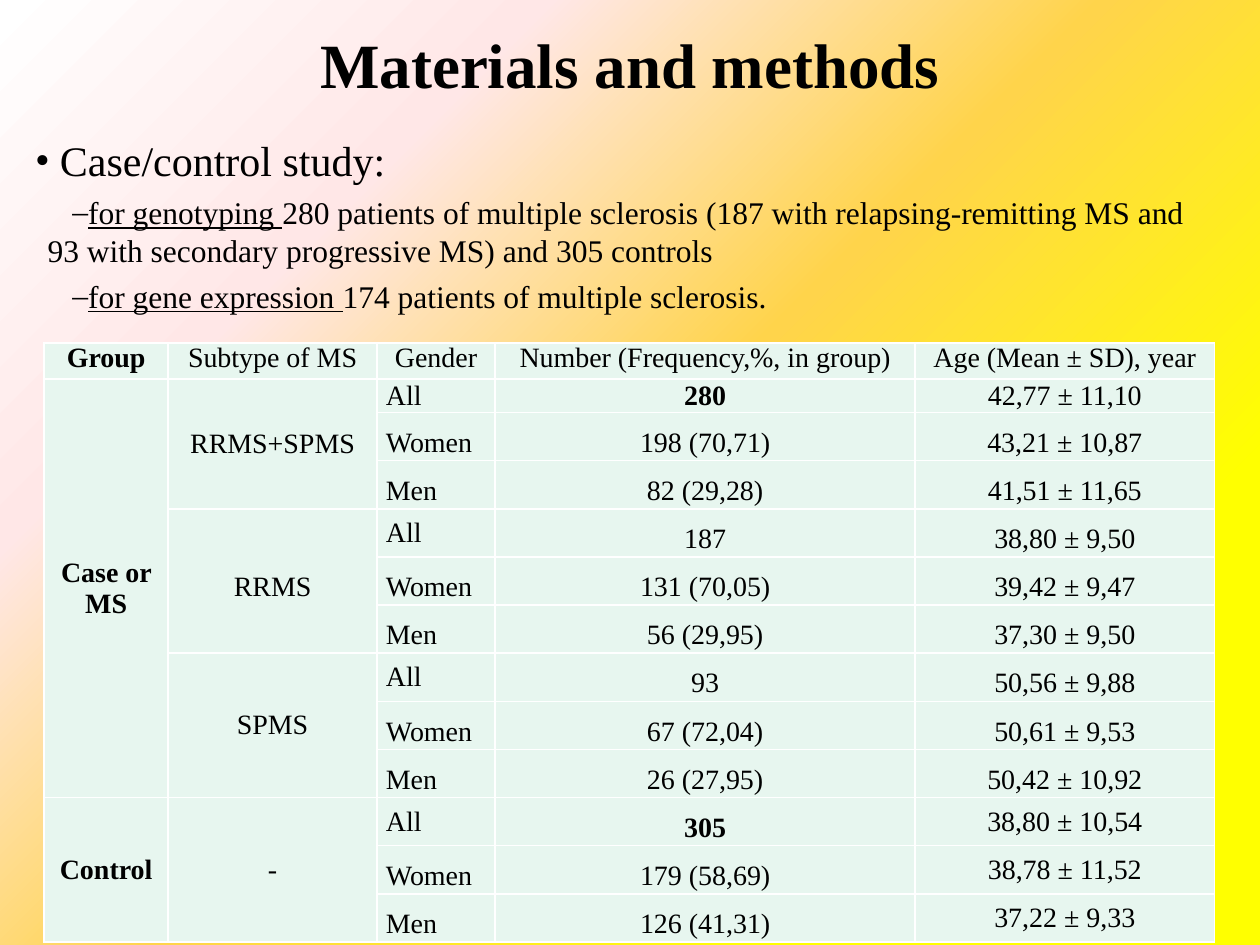
from lxml import etree
from pptx import Presentation
from pptx import util as u
from pptx.dml.color import RGBColor
from pptx.enum import text
from pptx.oxml.ns import qn

FONT = "Times New Roman"
BLACK, WHITE, MINT = "000000", "FFFFFF", "E7F6EF"
STOPS = [(0, WHITE), (25, "FFE7E7"), (50, "FFD44B"), (78, "FFFF00")]
CENTER, LEFT = text.PP_ALIGN.CENTER, text.PP_ALIGN.LEFT
MIDDLE, TOP = text.MSO_ANCHOR.MIDDLE, text.MSO_ANCHOR.TOP

HEADER = ["Group", "Subtype of MS", "Gender", "Number (Frequency,%, in group)",
          "Age (Mean ± SD), year"]
GENDERS = ["All", "Women", "Men"]
SUBTYPES = [
    ("RRMS+SPMS", [("280", "42,77 ± 11,10"), ("198 (70,71)", "43,21 ± 10,87"),
                   ("82 (29,28)", "41,51 ± 11,65")]),
    ("RRMS", [("187", "38,80 ± 9,50"), ("131 (70,05)", "39,42 ± 9,47"),
              ("56 (29,95)", "37,30 ± 9,50")]),
    ("SPMS", [("93", "50,56 ± 9,88"), ("67 (72,04)", "50,61 ± 9,53"),
              ("26 (27,95)", "50,42 ± 10,92")]),
    ("-", [("305", "38,80 ± 10,54"), ("179 (58,69)", "38,78 ± 11,52"),
           ("126 (41,31)", "37,22 ± 9,33")]),
]
GROUPS = [("Case or MS", 1, 9), ("Control", 10, 12)]
COL_WIDTHS = [2.5, 4.21, 2.38, 8.47, 6.03]
ROW_HEIGHTS = [0.73, 0.64] + [0.97] * 11
LOOSE = 1.4  # the widest line spacing that fits the row height

STUDY = [
    ("for genotyping ", "280 patients of multiple sclerosis (187 with relapsing-remitting "
     "MS and 93 with secondary progressive MS) and 305 controls"),
    ("for gene expression ", "174 patients of multiple sclerosis."),
]


def color(hex_value):
    return RGBColor.from_string(hex_value)


def sub(parent, tag, **attrs):
    return etree.SubElement(parent, qn(tag), {k: str(v) for k, v in attrs.items()})


def style(r, size, bold=False, underline=None):
    f = r.font
    f.name, f.size, f.bold, f.underline = FONT, u.Pt(size), bold, underline
    f.color.rgb = color(BLACK)


def set_bullet(p, char, margin, indent):
    pPr = p._p.get_or_add_pPr()
    pPr.set("marL", str(u.Cm(margin)))
    pPr.set("indent", str(u.Cm(indent)))
    sub(pPr, "a:buFont", typeface=FONT)
    sub(pPr, "a:buChar", char=char)


def add_background(s):
    """Radial gradient spreading from the top left corner."""
    s.background.fill.solid()
    bgPr = s.element.find(".//" + qn("p:bgPr"))
    bgPr.remove(bgPr[0])
    grad = etree.Element(qn("a:gradFill"), rotWithShape="1")
    bgPr.insert(0, grad)
    stops = sub(grad, "a:gsLst")
    for pos, value in STOPS:
        sub(sub(stops, "a:gs", pos=pos * 1000), "a:srgbClr", val=value)
    sub(sub(grad, "a:path", path="circle"), "a:fillToRect", r=100000, b=100000)


def add_text_frame(s, box, anchor):
    tf = s.shapes.add_textbox(*map(u.Cm, box)).text_frame
    tf.word_wrap = True
    tf.vertical_anchor = anchor
    return tf


def add_title(s, box):
    p = add_text_frame(s, box, MIDDLE).paragraphs[0]
    p.text = "Materials and methods"
    p.alignment = CENTER
    style(p.runs[0], 36, bold=True)


def add_study(s, box):
    tf = add_text_frame(s, box, TOP)
    p = tf.paragraphs[0]
    p.text = "Case/control study:"
    p.line_spacing, p.space_before = 1.25, u.Pt(7)
    set_bullet(p, "•", 0.5, -0.5)
    style(p.runs[0], 24)
    for purpose, patients in STUDY:
        p = tf.add_paragraph()
        p.level, p.space_before = 1, u.Pt(4.5)
        set_bullet(p, "–", 0.25, 0.5)
        for words, underline in ((purpose, True), (patients, False)):
            r = p.add_run()
            r.text = words
            style(r, 18, underline=underline)


def set_borders(cell):
    tcPr = cell._tc.get_or_add_tcPr()
    for i, side in enumerate(("a:lnL", "a:lnR", "a:lnT", "a:lnB")):
        ln = etree.Element(qn(side), w=str(u.Pt(1)))
        sub(sub(ln, "a:solidFill"), "a:srgbClr", val=WHITE)
        tcPr.insert(i, ln)


def fill_cell(cell, words, bold=False, align=CENTER, anchor=MIDDLE, spacing=None):
    cell.vertical_anchor = anchor
    p = cell.text_frame.paragraphs[0]
    p.text = words
    p.alignment, p.line_spacing = align, spacing
    style(p.runs[0], 16, bold)


def add_patients_table(s, box):
    table = s.shapes.add_table(len(ROW_HEIGHTS), len(COL_WIDTHS), *map(u.Cm, box)).table
    for col, width in zip(table.columns, COL_WIDTHS):
        col.width = u.Cm(width)
    for row, height in zip(table.rows, ROW_HEIGHTS):
        row.height = u.Cm(height)
    for cell in table.iter_cells():
        cell.fill.solid()
        cell.fill.fore_color.rgb = color(MINT)
        cell.margin_left = cell.margin_right = u.Cm(0.18)
        cell.margin_top = cell.margin_bottom = 0
        set_borders(cell)

    for c, words in enumerate(HEADER):
        fill_cell(table.cell(0, c), words, bold=c == 0, anchor=TOP)
    for name, first, last in GROUPS:
        table.cell(first, 0).merge(table.cell(last, 0))
        fill_cell(table.cell(first, 0), name, bold=True)
    for block, (subtype, values) in enumerate(SUBTYPES):
        top = 1 + block * len(GENDERS)
        table.cell(top, 1).merge(table.cell(top + len(GENDERS) - 1, 1))
        fill_cell(table.cell(top, 1), subtype, spacing=LOOSE if subtype == "RRMS" else None)
        for i, (gender, (number, age)) in enumerate(zip(GENDERS, values)):
            r = top + i
            spacing = LOOSE if r > 1 else None
            fill_cell(table.cell(r, 2), gender, align=LEFT, spacing=LOOSE if i else None)
            fill_cell(table.cell(r, 3), number, bold=number in ("280", "305"),
                      spacing=spacing)
            fill_cell(table.cell(r, 4), age, spacing=None if subtype == "-" else spacing)


def main():
    prs = Presentation()
    prs.slide_width, prs.slide_height = u.Cm(25.4), u.Cm(19.05)
    s = prs.slides.add_slide(prs.slide_layouts[6])
    add_background(s)
    add_title(s, (1.9, 0.22, 21.6, 2.1))
    add_study(s, (0.46, 2.34, 24.43, 6.86))
    add_patients_table(s, (0.89, 6.91, sum(COL_WIDTHS), sum(ROW_HEIGHTS)))
    prs.save("out.pptx")


if __name__ == "__main__":
    main()
